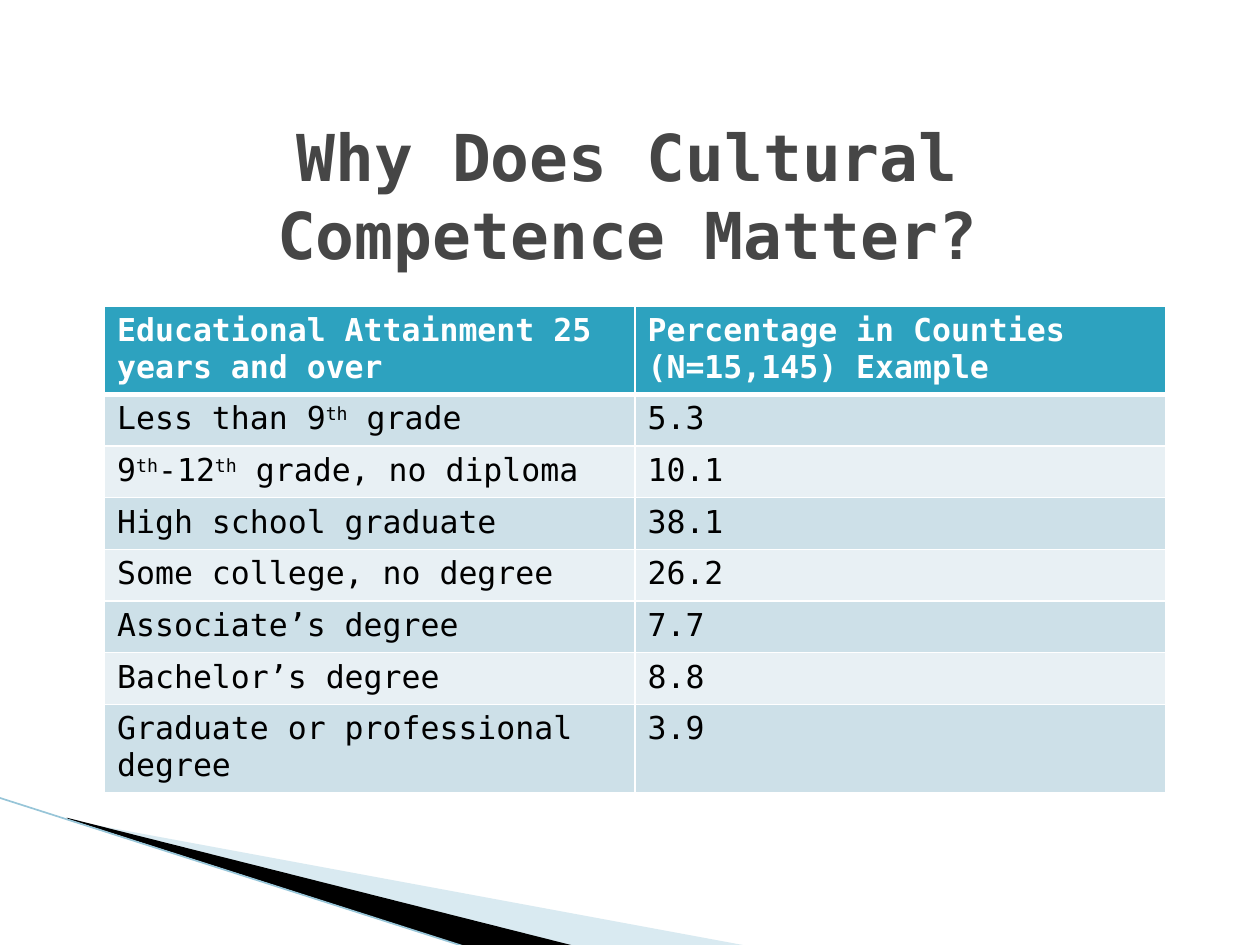
from dataclasses import dataclass

from lxml.etree import SubElement
from pptx import Presentation
from pptx.dml.color import RGBColor
from pptx.enum.shapes import MSO_CONNECTOR
from pptx.enum.text import MSO_ANCHOR, PP_ALIGN
from pptx.oxml.ns import qn
from pptx.util import Inches, Pt


@dataclass(frozen=True)
class Theme:
    font: str = "DejaVu Sans Mono"
    title: str = "464646"
    body: str = "000000"
    white: str = "FFFFFF"
    header: str = "2DA2BF"
    bands: tuple = ("CDE0E8", "E8F0F4")
    wedge: str = "A0CBDC"
    dark_wedge: str = "000000"
    edge: str = "97C5D8"
    title_size: float = 36.9
    table_size: float = 18
    edge_width: float = 0.95
    border_width: float = 1
    header_border_width: float = 3


THEME = Theme()
SUPERSCRIPT_MARK = "|"
ROWS = [
    ("Educational Attainment 25 years and over", "Percentage in Counties\n(N=15,145) Example"),
    ("Less than 9|th| grade", "5.3"),
    ("9|th|-12|th| grade, no diploma", "10.1"),
    ("High school graduate", "38.1"),
    ("Some college, no degree", "26.2"),
    ("Associate’s degree", "7.7"),
    ("Bachelor’s degree", "8.8"),
    ("Graduate or professional degree", "3.9"),
]


def color(value):
    return RGBColor.from_string(value)


def write_text(frame, text, style, alignment=PP_ALIGN.LEFT):
    for index, line in enumerate(text.split("\n")):
        para = frame.add_paragraph() if index else frame.paragraphs[0]
        para.alignment = alignment
        for position, piece in enumerate(line.split(SUPERSCRIPT_MARK)):
            span = para.add_run()
            span.text = piece
            for name, value in style.items():
                setattr(span.font, name, value)
            span.font.color.rgb = color(text_color(style))
            if position % 2:
                span.font._element.set("baseline", "30000")


def text_color(style):
    if style["size"] == Pt(THEME.title_size):
        return THEME.title
    return THEME.white if style["bold"] else THEME.body


def add_wedge(slide, points, fill, opacity=100):
    corners = [(Inches(x), Inches(y)) for x, y in points]
    builder = slide.shapes.build_freeform(*corners[0])
    builder.add_line_segments(corners[1:])
    wedge = builder.convert_to_shape()
    wedge.shadow.inherit = False
    wedge.line.fill.background()
    wedge.fill.solid()
    wedge.fill.fore_color.rgb = color(fill)
    if opacity < 100:
        shade = wedge._element.spPr.find(".//" + qn("a:srgbClr"))
        SubElement(shade, qn("a:alpha"), val=str(opacity * 1000))


def add_edge(slide, start, end):
    ends = [Inches(value) for value in (*start, *end)]
    edge = slide.shapes.add_connector(MSO_CONNECTOR.STRAIGHT, *ends)
    edge.line.color.rgb = color(THEME.edge)
    edge.line.width = Pt(THEME.edge_width)
    SubElement(edge._element.spPr, qn("a:effectLst"))


def add_title(slide, text):
    box = slide.shapes.add_textbox(Inches(1.14), Inches(0.92), Inches(7.68), Inches(1.25))
    frame = box.text_frame
    frame.word_wrap = True
    frame.vertical_anchor = MSO_ANCHOR.MIDDLE
    style = {"name": THEME.font, "size": Pt(THEME.title_size), "bold": True}
    write_text(frame, text, style, PP_ALIGN.CENTER)


def set_borders(cell, widths):
    properties = cell._tc.get_or_add_tcPr()
    for side, width in widths.items():
        line = SubElement(properties, qn(f"a:ln{side}"), w=str(Pt(width)))
        fill = SubElement(line, qn("a:solidFill"))
        SubElement(fill, qn("a:srgbClr"), val=THEME.white)


def add_attainment_table(slide, rows):
    row_height = Inches(0.41)
    frame = slide.shapes.add_table(
        len(rows), 2, Inches(0.83), Inches(2.43), Inches(8.42), row_height * len(rows)
    )
    for row_index, row in enumerate(rows):
        is_header = row_index == 0
        fill = THEME.header if is_header else THEME.bands[(row_index - 1) % 2]
        style = {"name": THEME.font, "size": Pt(THEME.table_size), "bold": is_header}
        widths = dict.fromkeys("LRTB", THEME.border_width)
        if is_header:
            widths["B"] = THEME.header_border_width
        elif row_index == 1:
            widths["T"] = THEME.header_border_width
        for column_index, text in enumerate(row):
            cell = frame.table.cell(row_index, column_index)
            set_borders(cell, widths)
            cell.fill.solid()
            cell.fill.fore_color.rgb = color(fill)
            write_text(cell.text_frame, text, style)


def main():
    deck = Presentation()
    deck.slide_width, deck.slide_height = Inches(10), Inches(7.5)
    page = deck.slides.add_slide(deck.slide_layouts[6])
    add_wedge(page, [(0.55, 6.51), (5.95, 7.51), (4.56, 7.51), (0.55, 6.5)], THEME.wedge, 40)
    add_wedge(page, [(0.53, 6.49), (4.57, 7.51), (3.72, 7.52), (0.54, 6.5)], THEME.dark_wedge)
    add_edge(page, (-0.01, 6.33), (3.71, 7.52))
    add_title(page, "Why Does Cultural Competence Matter?")
    add_attainment_table(page, ROWS)
    deck.save("out.pptx")


if __name__ == "__main__":
    main()
